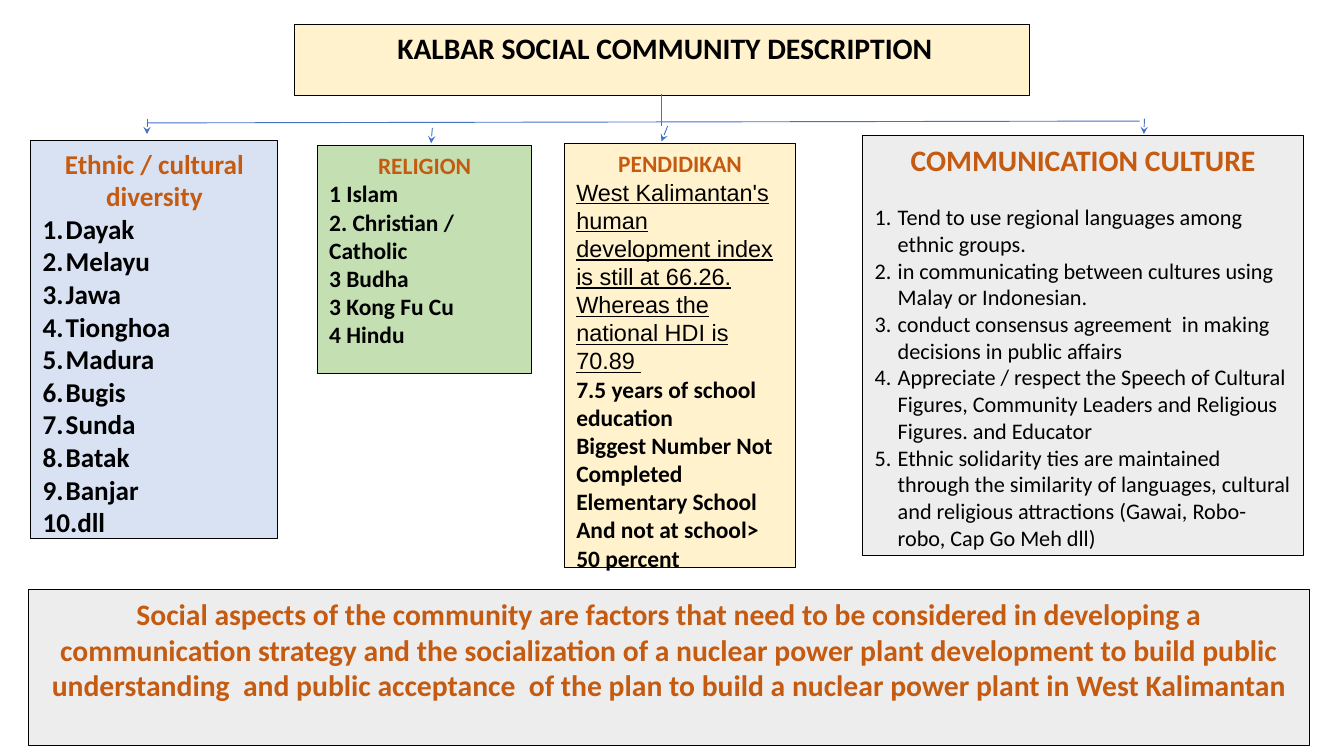
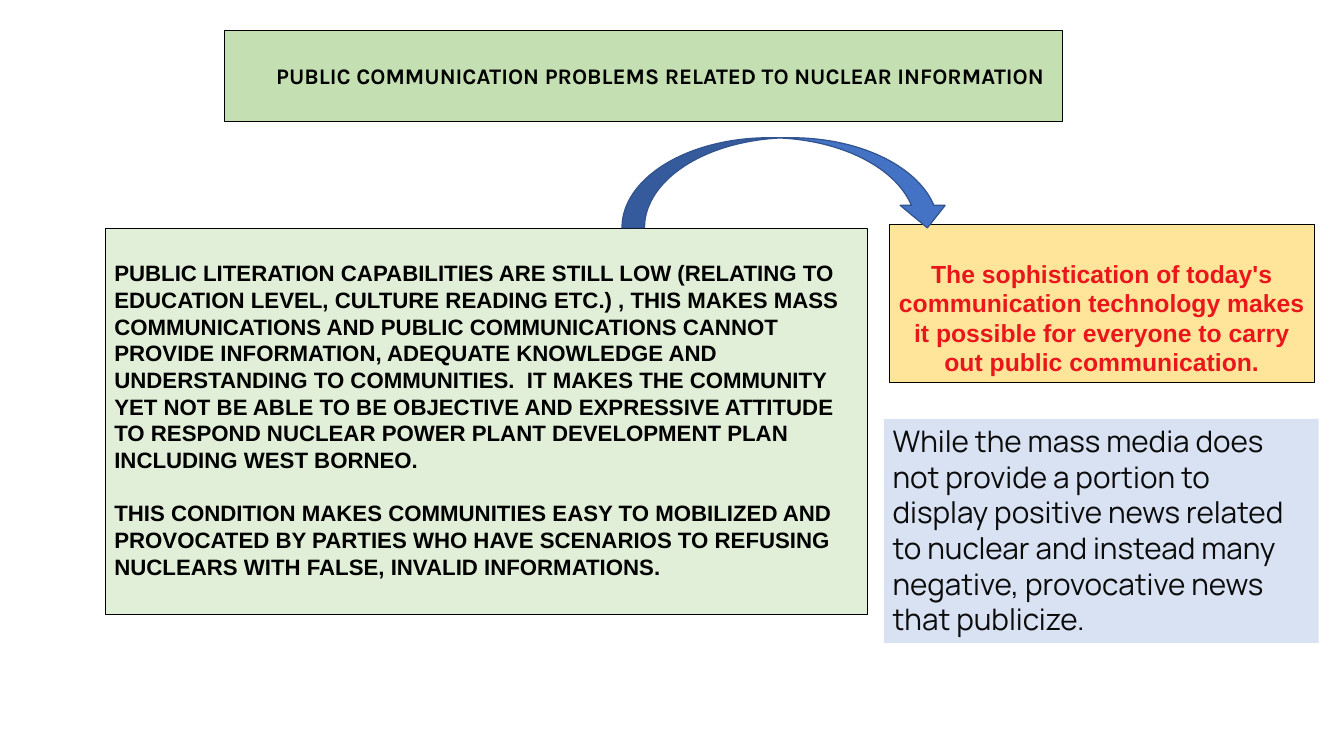
from lxml import etree
from pptx import Presentation
from pptx import util as u
from pptx.dml import color
from pptx.enum import shapes, text
from pptx.oxml import ns

BLACK, ORANGE, BLUE = "000000", "C55A11", "4472C4"
CREAM, GREEN, PALE_BLUE, GREY = "FFF2CC", "C4E0B2", "D8E2F3", "EDEDED"
CENTER, LEFT = text.PP_ALIGN.CENTER, text.PP_ALIGN.LEFT
WIDE = (9.5, 5, 9.5, 5)
LEADING, INDENT = 1.2, 18.72


def rgb(value):
    """Turn a hex string into a colour."""
    return color.RGBColor.from_string(value)


def para(words, size, ink=BLACK, name="Calibri", align=LEFT, numbered=False, before=0, **font):
    """Describe one paragraph and its format values."""
    return {
        "words": words, "ink": ink, "numbered": numbered,
        "font": {"size": u.Pt(size), "name": name, "bold": True, **font},
        "layout": {"alignment": align, "line_spacing": u.Pt(round(size * LEADING, 2)),
                   "space_before": u.Pt(before)},
    }


def heading(words, size):
    """Describe a centred orange heading."""
    return para(words, size, ORANGE, align=CENTER)


def apply(target, values):
    """Set every format value on the target."""
    for key, value in values.items():
        setattr(target, key, value)


def number(p):
    """Give a paragraph a hanging automatic number."""
    pr = p._p.get_or_add_pPr()
    apply_indent = {"marL": INDENT, "indent": -INDENT}
    for key, value in apply_indent.items():
        pr.set(key, str(int(u.Pt(value))))
    ink = etree.SubElement(pr, ns.qn("a:buClr"))
    etree.SubElement(ink, ns.qn("a:srgbClr"), val=BLACK)
    etree.SubElement(pr, ns.qn("a:buFont"), typeface="+mj-lt")
    etree.SubElement(pr, ns.qn("a:buAutoNum"), type="arabicPeriod")


def shape(s, kind, at, fill, line=BLACK, width=0.75):
    """Draw a preset shape with a plain fill and optional outline."""
    sp = s.shapes.add_shape(kind, *map(u.Pt, at))
    sp.shadow.inherit = False
    sp.fill.solid()
    sp.fill.fore_color.rgb = rgb(fill)
    if line:
        sp.line.color.rgb = rgb(line)
        sp.line.width = u.Pt(width)
    else:
        sp.line.fill.background()
    return sp


def box(s, at, fill, paras, inset=WIDE, anchor=text.MSO_ANCHOR.TOP, line=BLACK):
    """Draw a filled rectangle holding paragraphs."""
    tf = shape(s, shapes.MSO_SHAPE.RECTANGLE, at, fill, line).text_frame
    sides = ("margin_left", "margin_top", "margin_right", "margin_bottom")
    apply(tf, dict(zip(sides, map(u.Pt, inset)), word_wrap=True, vertical_anchor=anchor))
    for i, item in enumerate(paras):
        p = tf.add_paragraph() if i else tf.paragraphs[0]
        apply(p, item["layout"])
        r = p.add_run()
        r.text = item["words"]
        apply(r.font, item["font"])
        r.font.color.rgb = rgb(item["ink"])
        if item["numbered"]:
            number(p)


def connect(s, ends, arrow=False):
    """Draw a straight blue line, with a stealth head if asked."""
    sp = s.shapes.add_connector(shapes.MSO_CONNECTOR.STRAIGHT, *map(u.Pt, ends))
    sp.line.color.rgb = rgb(BLUE)
    sp.line.width = u.Pt(0.75)
    if arrow:
        etree.SubElement(sp.line._get_or_add_ln(), ns.qn("a:tailEnd"), type="stealth")
    etree.SubElement(sp._element.spPr, ns.qn("a:effectLst"))


def community(s):
    """Build the slide describing the social community."""
    box(s, (457, 116, 187, 343.5), CREAM, [
        heading("PENDIDIKAN", 19),
        para("West Kalimantan's human development index is still at 66.26. "
             "Whereas the national HDI is 70.89 ", 19, name="Arial", bold=False, underline=True),
        para("7.5 years of school education", 19),
        para("Biggest Number Not Completed Elementary School And not at school> 50 percent", 19),
    ])
    faiths = ("1 Islam", "2. Christian / Catholic", "3 Budha", "3 Kong Fu Cu", "4 Hindu")
    box(s, (257, 117.5, 173.5, 184.5), GREEN,
        [heading("RELIGION", 19)] + [para(faith, 19) for faith in faiths])
    peoples = ("Dayak", "Melayu", "Jawa", "Tionghoa", "Madura",
               "Bugis", "Sunda", "Batak", "Banjar", "dll")
    box(s, (25, 114, 200, 322), PALE_BLUE,
        [heading("Ethnic / cultural diversity", 22)]
        + [para(people, 22, numbered=True) for people in peoples])
    box(s, (238.5, 19.5, 594.5, 57.5), CREAM,
        [para("KALBAR SOCIAL COMMUNITY DESCRIPTION", 24, align=CENTER)], (14.5, 5, 9.5, 5))
    habits = (
        "Tend to use regional languages among ethnic groups.",
        "in communicating between cultures using Malay or Indonesian.",
        "conduct consensus agreement  in making decisions in public affairs",
        "Appreciate / respect the Speech of Cultural Figures, Community Leaders "
        "and Religious Figures. and Educator",
        "Ethnic solidarity ties are maintained through the similarity of languages, "
        "cultural and religious attractions (Gawai, Robo-robo, Cap Go Meh dll)",
    )
    box(s, (698.5, 109.5, 356.5, 340.5), GREY,
        [heading("COMMUNICATION CULTURE", 24)]
        + [para(habit, 18, numbered=True, bold=False, before=0 if i else 21.6)
           for i, habit in enumerate(habits)])
    box(s, (23, 477.5, 1037, 126), GREY, [heading(
        "Social aspects of the community are factors that need to be considered in developing "
        "a communication strategy and the socialization of a nuclear power plant development "
        "to build public understanding  and public acceptance  of the plan to build a nuclear "
        "power plant in West Kalimantan", 24)])
    for ends in ((535.5, 102, 535.5, 76.5), (119, 99.5, 922.5, 98)):
        connect(s, ends)
    for ends in ((119, 96, 119, 108.5), (350, 103.5, 349, 116),
                 (540.5, 102, 535.5, 114.5), (926.5, 96, 926, 108.5)):
        connect(s, ends, arrow=True)


def problems(s):
    """Build the slide on public communication problems."""
    box(s, (181.5, 25, 679, 73), GREEN,
        [para("PUBLIC COMMUNICATION PROBLEMS RELATED TO NUCLEAR INFORMATION", 18,
              name="Karla", align=CENTER)],
        (34, 3.6, 7.2, 3.6), text.MSO_ANCHOR.MIDDLE)
    box(s, (720, 181.5, 344, 128), "FEE599",
        [para("The sophistication of today's communication technology makes it possible "
              "for everyone to carry out public communication.", 20, "E9171C", "Arial", CENTER)],
        (7.2, 27.6, 7.2, 3.6))
    box(s, (85.5, 185, 617, 312.5), "E1EFD8", [
        para("PUBLIC LITERATION CAPABILITIES ARE STILL LOW (RELATING TO EDUCATION LEVEL, "
             "CULTURE READING ETC.) , THIS MAKES MASS COMMUNICATIONS AND PUBLIC COMMUNICATIONS "
             "CANNOT PROVIDE INFORMATION, ADEQUATE KNOWLEDGE AND UNDERSTANDING TO COMMUNITIES.  "
             "IT MAKES THE COMMUNITY YET NOT BE ABLE TO BE OBJECTIVE AND EXPRESSIVE ATTITUDE TO "
             "RESPOND NUCLEAR POWER PLANT DEVELOPMENT PLAN INCLUDING WEST BORNEO.",
             18, name="Arial"),
        para("THIS CONDITION MAKES COMMUNITIES EASY TO MOBILIZED AND PROVOCATED BY PARTIES WHO "
             "HAVE SCENARIOS TO REFUSING NUCLEARS WITH FALSE, INVALID INFORMATIONS.",
             18, name="Arial", before=21.6),
    ], (7.2, 25.2, 7.2, 3.6))
    shape(s, shapes.MSO_SHAPE.CURVED_DOWN_ARROW, (503.5, 111.5, 265.5, 73), BLUE, "31538F", 1)
    box(s, (715.5, 339, 352, 181.5), PALE_BLUE,
        [para("While the mass media does not provide a portion to display positive news related "
              "to nuclear and instead many negative, provocative news that publicize.",
              24, "0C0C0C", "Manrope", bold=False)],
        (7.2, 3.6, 7.2, 3.6), line=None)


def main():
    """Build and save the presentation."""
    prs = Presentation()
    apply(prs, {"slide_width": u.Pt(1088), "slide_height": u.Pt(612)})
    for build in (community, problems):
        build(prs.slides.add_slide(prs.slide_layouts[6]))
    prs.save("out.pptx")


if __name__ == "__main__":
    main()
